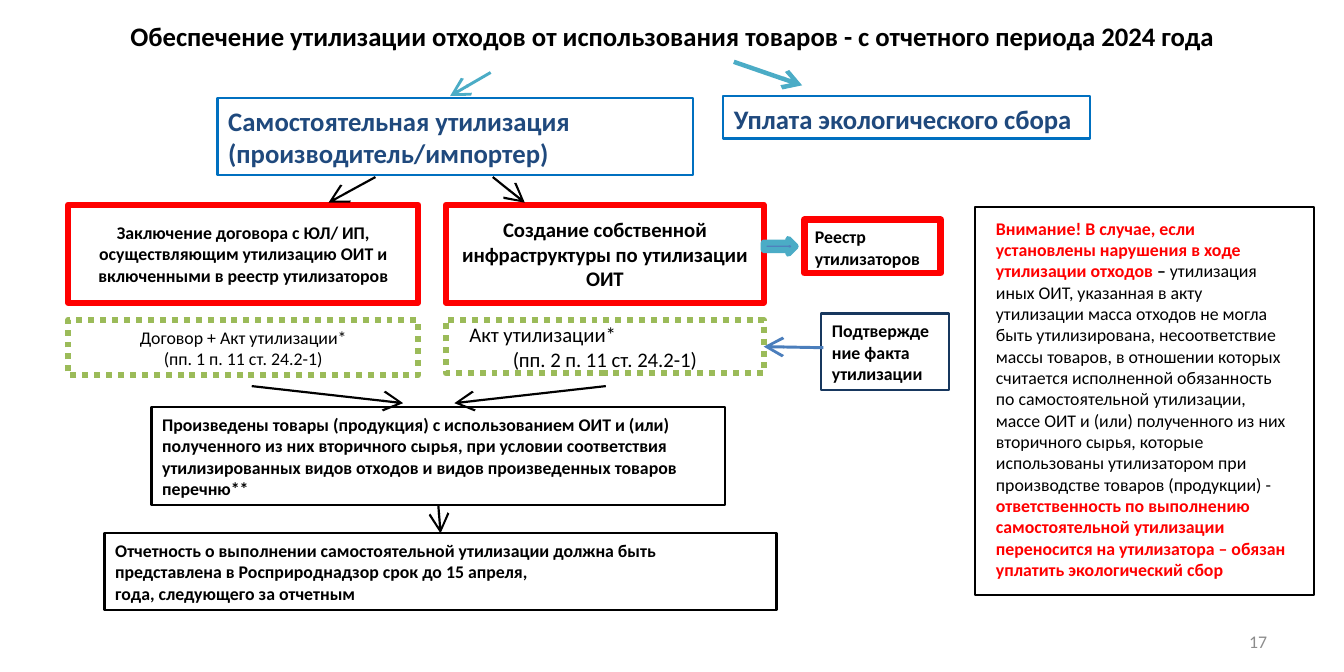
from dataclasses import dataclass

from lxml import etree
from pptx import Presentation
from pptx.dml.color import RGBColor
from pptx.enum.dml import MSO_LINE
from pptx.enum.shapes import MSO_CONNECTOR, MSO_SHAPE
from pptx.enum.text import MSO_ANCHOR, PP_ALIGN
from pptx.oxml.ns import qn
from pptx.util import Emu, Pt

RECT, RIGHT_ARROW = MSO_SHAPE.RECTANGLE, MSO_SHAPE.RIGHT_ARROW
STRAIGHT = MSO_CONNECTOR.STRAIGHT
DOTS = MSO_LINE.ROUND_DOT
LEFT, CENTER, RIGHT = PP_ALIGN.LEFT, PP_ALIGN.CENTER, PP_ALIGN.RIGHT
TOP, MIDDLE = MSO_ANCHOR.TOP, MSO_ANCHOR.MIDDLE
SIDE_TOP, SIDE_BOTTOM, SIDE_RIGHT = 0, 2, 3

PX = 9144  # 100 px to the inch
FONT = "Calibri"
COLORS = {
    "black": "000000", "white": "FFFFFF", "gray": "8C8C8C", "red": "FF0000",
    "green": "9BBB59", "navy": "1F497D", "dark_blue": "17375E",
    "bright_blue": "0070C0", "blue": "4F81BD", "steel": "4B7EBC", "teal": "4BACC6",
}


@dataclass
class Box:
    name: str
    at: tuple[int, int, int, int]
    text: str
    size: int = 6
    color: str = "black"
    bold: bool = True
    line: str = ""
    weight: float = 0.75
    dotted: bool = False
    fill: str = ""
    align: PP_ALIGN = LEFT
    anchor: MSO_ANCHOR = TOP
    margins: tuple[int, int] = (5, 3)


@dataclass
class Arrow:
    start: tuple[int, int]
    end: tuple[int, int]
    color: str = "black"
    weight: float = 0.75
    start_joint: tuple[str, int] | None = None
    end_joint: tuple[str, int] | None = None


BOXES = [
    Box("title", (0, 0, 630, 34),
        "Обеспечение утилизации отходов от использования товаров - с отчетного периода 2024 года",
        size=9, align=CENTER, anchor=MIDDLE),
    Box("number", (452, 292, 147, 17), "17", color="gray", bold=False,
        align=RIGHT, anchor=MIDDLE),
    # Two ways to comply
    Box("self", (102, 46, 223, 36), "Самостоятельная утилизация\n(производитель/импортер)",
        size=9, color="navy", line="bright_blue"),
    Box("fee", (339, 45, 172, 20), "Уплата экологического сбора",
        size=9, color="navy", line="bright_blue"),
    # Contract or own infrastructure
    Box("contract", (32, 96, 164, 46),
        "Заключение договора с ЮЛ/ ИП, осуществляющим утилизацию ОИТ и "
        "включенными в реестр утилизаторов",
        line="red", weight=2, fill="white", align=CENTER, anchor=MIDDLE),
    Box("own", (209, 96, 149, 46), "Создание собственной инфраструктуры по утилизации ОИТ",
        size=7, line="red", weight=2, fill="white", align=CENTER, anchor=MIDDLE),
    Box("contract_act", (32, 150, 164, 26), "Договор + Акт утилизации*\n(пп. 1 п. 11 ст. 24.2-1)",
        bold=False, line="green", weight=2, dotted=True, fill="white",
        align=CENTER, anchor=MIDDLE),
    Box("own_act", (209, 150, 149, 25), "Акт утилизации*\n(пп. 2 п. 11 ст. 24.2-1)",
        size=7, bold=False, line="green", weight=2, dotted=True, fill="white",
        align=CENTER, anchor=MIDDLE),
    Box("registry", (377, 103, 64, 25), "Реестр\nутилизаторов", line="red", weight=2.25),
    Box("proof", (385, 147, 60, 36), "Подтверждение факта\nутилизации", line="dark_blue"),
    # Outcome and reporting
    Box("goods", (71, 191, 269, 46),
        "Произведены товары (продукция) с использованием ОИТ и (или) полученного из них "
        "вторичного сырья, при условии соответствия утилизированных видов отходов и видов "
        "произведенных товаров перечню**", line="black"),
    Box("report", (49, 250, 315, 36),
        "Отчетность о выполнении самостоятельной утилизации должна быть представлена "
        "в Росприроднадзор срок до 15 апреля,\nгода, следующего за отчетным", line="black"),
    Box("warning", (457, 97, 159, 182), "", line="black", margins=(10, 5)),
]

# Text, colour and bold of each part of the warning
WARNING = [
    ("Внимание! В случае, если установлены нарушения в ходе утилизации отходов ", "red", True),
    ("– ", "black", True),
    ("утилизация иных ОИТ, указанная в акту утилизации масса отходов не могла быть "
     "утилизирована, несоответствие массы товаров, в отношении которых считается исполненной "
     "обязанность по самостоятельной утилизации, массе ОИТ и (или) полученного из них "
     "вторичного сырья, которые использованы утилизатором при производстве товаров "
     "(продукции) - ", "black", False),
    ("ответственность по выполнению самостоятельной утилизации переносится на утилизатора – "
     "обязан уплатить экологический сбор", "red", True),
]

ARROWS = [
    Arrow((230, 34), (211, 45), "teal", 1),
    Arrow((344, 29), (376, 40), "teal", 1.5),
    Arrow((176, 83), (154, 95)),
    Arrow((231, 83), (246, 95)),
    Arrow((386, 163), (358, 163), "steel", 1, end_joint=("own_act", SIDE_RIGHT)),
    Arrow((118, 181), (189, 189)),
    Arrow((284, 181), (213, 189)),
    Arrow((205, 237), (207, 250), start_joint=("goods", SIDE_BOTTOM),
          end_joint=("report", SIDE_TOP)),
]


def px(n: int) -> Emu:
    return Emu(n * PX)


def rgb(name: str) -> RGBColor:
    return RGBColor.from_string(COLORS[name])


def format_run(r, size: int, color: str, bold: bool) -> None:
    r.font.name = FONT
    r.font.size = Pt(size)
    r.font.bold = bold
    r.font.color.rgb = rgb(color)


def outline(sp, color: str, weight: float) -> None:
    sp.line.color.rgb = rgb(color)
    sp.line.width = Pt(weight)


def add_box(s, box: Box):
    at = [px(n) for n in box.at]
    if box.line:
        sp = s.shapes.add_shape(RECT, *at)
        sp.shadow.inherit = False
        outline(sp, box.line, box.weight)
        if box.dotted:
            sp.line.dash_style = DOTS
    else:
        sp = s.shapes.add_textbox(*at)
    if box.fill:
        sp.fill.solid()
        sp.fill.fore_color.rgb = rgb(box.fill)
    else:
        sp.fill.background()
    tf = sp.text_frame
    tf.word_wrap = True
    tf.vertical_anchor = box.anchor
    tf.margin_left = tf.margin_right = px(box.margins[0])
    tf.margin_top = tf.margin_bottom = px(box.margins[1])
    tf.text = box.text
    for p in tf.paragraphs:
        p.alignment = box.align
        for r in p.runs:
            format_run(r, box.size, box.color, box.bold)
    return sp


def add_arrow(s, arrow: Arrow, shapes: dict) -> None:
    c = s.shapes.add_connector(STRAIGHT, *[px(n) for n in arrow.start + arrow.end])
    if arrow.start_joint:
        name, side = arrow.start_joint
        c.begin_connect(shapes[name], side)
    if arrow.end_joint:
        name, side = arrow.end_joint
        c.end_connect(shapes[name], side)
    outline(c, arrow.color, arrow.weight)
    etree.SubElement(c.line._get_or_add_ln(), qn("a:tailEnd"), type="arrow")
    etree.SubElement(c._element.spPr, qn("a:effectLst"))


def main() -> None:
    prs = Presentation()
    prs.slide_width, prs.slide_height = px(630), px(315)
    s = prs.slides.add_slide(prs.slide_layouts[6])

    shapes = {box.name: add_box(s, box) for box in BOXES}

    # The act's first line stands at the left, slightly indented
    p = shapes["own_act"].text_frame.paragraphs[0]
    p.alignment = LEFT
    p._p.get_or_add_pPr().set("marL", str(px(6)))

    p = shapes["warning"].text_frame.paragraphs[0]
    for text, color, bold in WARNING:
        r = p.add_run()
        r.text = text
        format_run(r, 6, color, bold)

    # Block arrow to the registry
    sp = s.shapes.add_shape(RIGHT_ARROW, px(358), px(112), px(15), px(7))
    sp.shadow.inherit = False
    sp.fill.solid()
    sp.fill.fore_color.rgb = rgb("blue")
    outline(sp, "teal", 2)

    for arrow in ARROWS:
        add_arrow(s, arrow, shapes)
    prs.save("out.pptx")


if __name__ == "__main__":
    main()
